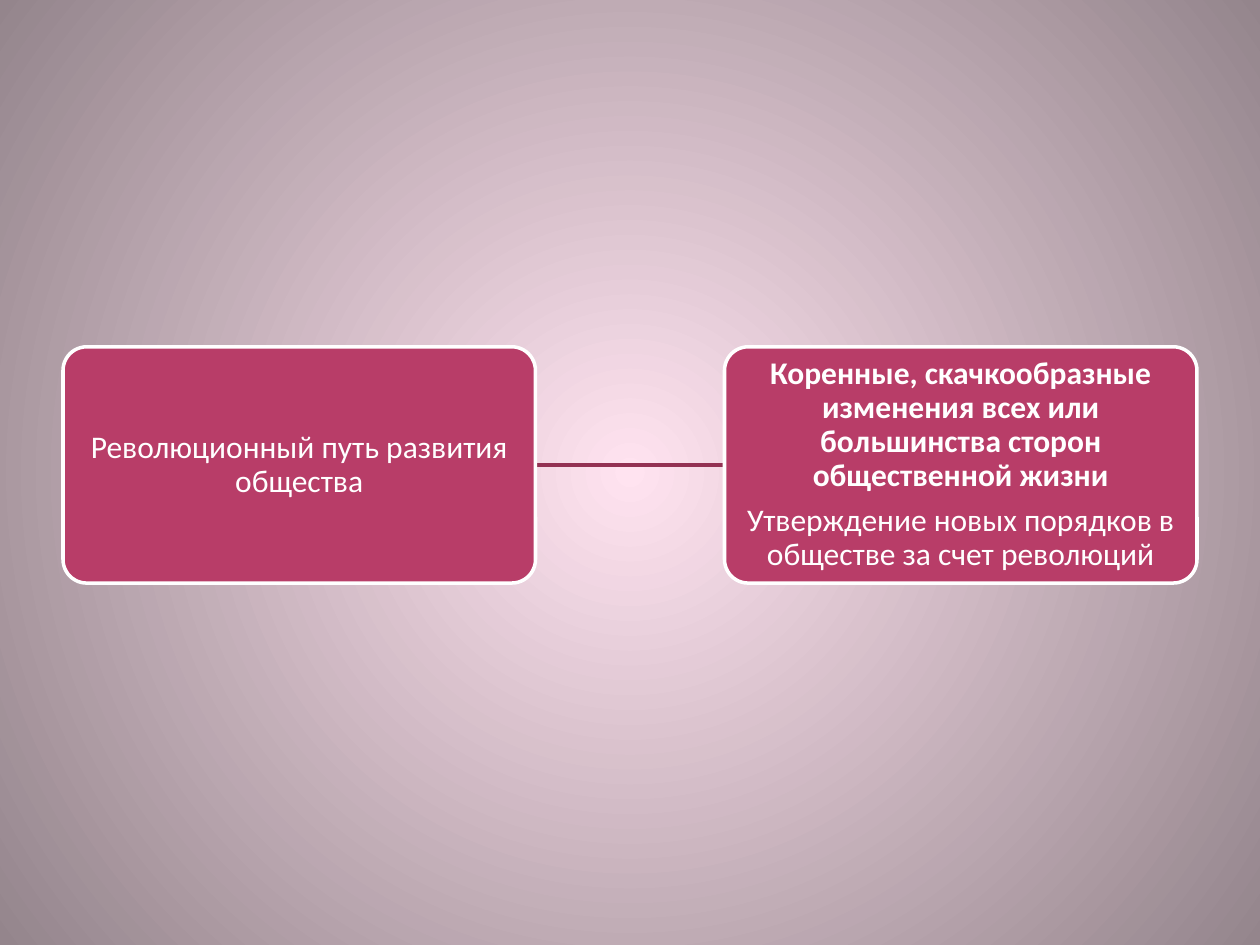
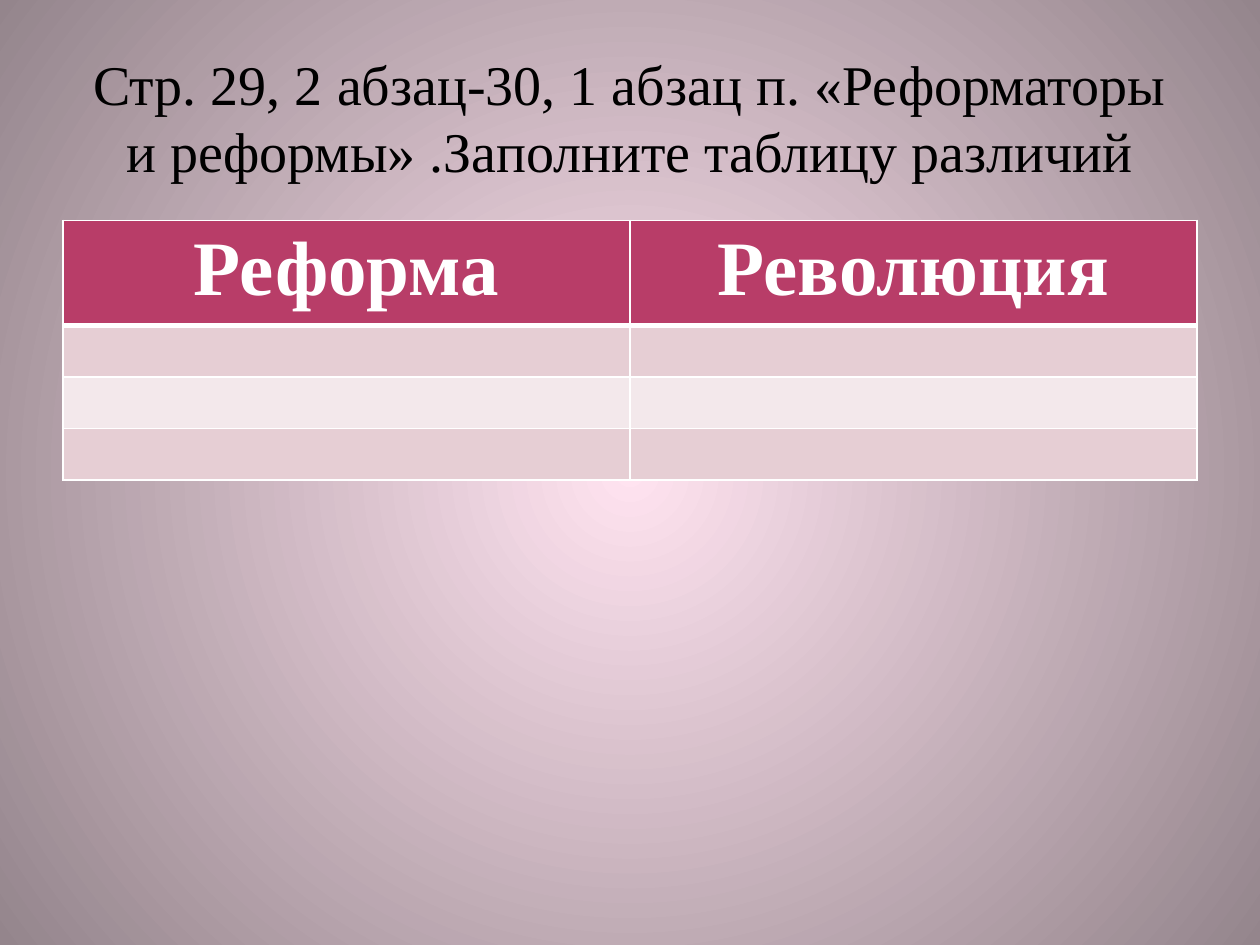
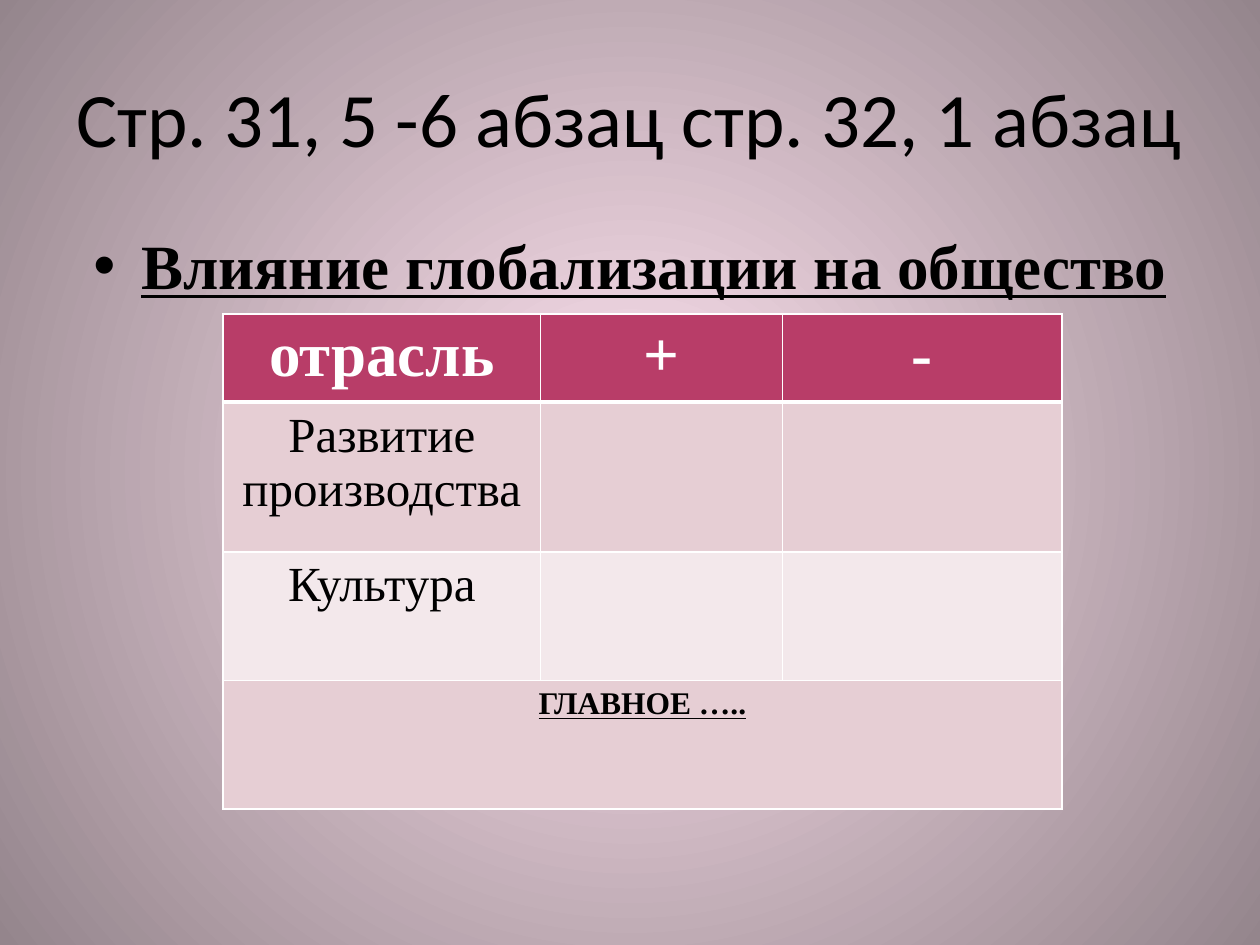
"""Builds three lesson slides on revolution, reform and globalization."""
from lxml.etree import SubElement
from pptx import Presentation
from pptx.dml.color import RGBColor
from pptx.enum.shapes import MSO_CONNECTOR, MSO_SHAPE
from pptx.enum.text import MSO_ANCHOR, PP_ALIGN
from pptx.oxml.ns import qn
from pptx.util import Inches, Pt

BERRY = RGBColor(0xB8, 0x3D, 0x68)
DARK_BERRY = RGBColor(0x93, 0x31, 0x53)
PALE_PINK = RGBColor(0xFF, 0xE3, 0xF0)
MAUVE = RGBColor(0x94, 0x85, 0x8C)
ROSE_BAND = RGBColor(0xE6, 0xCE, 0xD4)
LIGHT_BAND = RGBColor(0xF3, 0xE8, 0xEB)
WHITE = RGBColor(0xFF, 0xFF, 0xFF)
BLACK = RGBColor(0, 0, 0)
SANS, SERIF = "Calibri", "Times New Roman"


def write(paragraph, text, size=18, font=SERIF, color=BLACK, bold=False,
          underline=False, spacing=None, before=None, after=None):
    paragraph.alignment = PP_ALIGN.CENTER
    paragraph.line_spacing = spacing
    paragraph.space_before = before
    paragraph.space_after = after
    run = paragraph.add_run()
    run.text = text
    run.font.size = Pt(size)
    run.font.name = font
    run.font.color.rgb = color
    run.font.bold = bold
    run.font.underline = underline


def add_border(cell, side, weight):
    edge = SubElement(cell._tc.get_or_add_tcPr(), qn(f"a:{side}"), w=str(Pt(weight)))
    paint = SubElement(edge, qn("a:solidFill"))
    SubElement(paint, qn("a:srgbClr"), val=str(WHITE))


deck = Presentation()
deck.slide_width, deck.slide_height = Inches(10), Inches(7.5)
col, row = deck.slide_width / 100, deck.slide_height / 100

backdrop = deck.slide_master.background.fill
backdrop.gradient()
for stop, color, position in zip(backdrop.gradient_stops, (PALE_PINK, MAUVE), (0, 1)):
    stop.color.rgb = color
    stop.position = position
gradient = deck.slide_master.element.find(".//" + qn("a:gradFill"))
gradient.remove(gradient.find(qn("a:lin")))
circle = SubElement(gradient, qn("a:path"), path="circle")
SubElement(circle, qn("a:fillToRect"), l="50000", t="50000", r="50000", b="50000")

blank = deck.slide_layouts[6]
revolution, differences, globalization = [deck.slides.add_slide(blank) for _ in range(3)]

card_width, card_height, card_top = 37.5, 25, 36.7
card_lefts = (5, 57.5)
card_texts = (
    [("Революционный путь развития общества", False)],
    [("Коренные, скачкообразные изменения всех или большинства сторон "
      "общественной жизни", True),
     ("Утверждение новых порядков в обществе за счет революций", False)],
)
middle = int((card_top + card_height / 2) * row)
link = revolution.shapes.add_connector(
    MSO_CONNECTOR.STRAIGHT, int((card_lefts[0] + card_width) * col), middle,
    int(card_lefts[1] * col), middle)
link.line.color.rgb = DARK_BERRY
link.line.width = Pt(2)
SubElement(link._element.spPr, qn("a:effectLst"))

for left, statements in zip(card_lefts, card_texts):
    card = revolution.shapes.add_shape(
        MSO_SHAPE.ROUNDED_RECTANGLE, int(left * col), int(card_top * row),
        int(card_width * col), int(card_height * row))
    card.adjustments[0] = 0.1
    card.shadow.inherit = False
    card.fill.solid()
    card.fill.fore_color.rgb = BERRY
    card.line.color.rgb = WHITE
    card.line.width = Pt(2)
    frame = card.text_frame
    frame.word_wrap = True
    frame.vertical_anchor = MSO_ANCHOR.MIDDLE
    frame.margin_left = frame.margin_right = Inches(0.01)
    frame.margin_top = frame.margin_bottom = Inches(0.01)
    for index, (text, bold) in enumerate(statements):
        paragraph = frame.add_paragraph() if index else frame.paragraphs[0]
        write(paragraph, text, font=SANS, color=WHITE, bold=bold,
              spacing=0.9, after=Pt(6.3))

titles = (
    (differences, "Стр. 29, 2 абзац-30, 1 абзац п. «Реформаторы и реформы» "
     ".Заполните таблицу различий", 32, SERIF),
    (globalization, "Стр. 31, 5 -6 абзац стр. 32, 1 абзац", 44, SANS),
)
for slide, text, size, font in titles:
    title = slide.shapes.add_textbox(
        int(5 * col), int(4 * row), int(90 * col), int(16.67 * row)).text_frame
    title.word_wrap = True
    title.vertical_anchor = MSO_ANCHOR.MIDDLE
    write(title.paragraphs[0], text, size=size, font=font)

topic = globalization.shapes.add_textbox(
    int(5 * col), int(23.33 * row), int(90 * col), int(66 * row)).text_frame
topic.word_wrap = True
bullet_line = topic.paragraphs[0]
write(bullet_line, "Влияние глобализации на общество", size=36, bold=True,
      underline=True, before=Pt(7.2))
bullet_format = bullet_line._p.get_or_add_pPr()
bullet_format.set("marL", str(Inches(0.38)))
bullet_format.set("indent", str(-Inches(0.38)))
SubElement(bullet_format, qn("a:buFont"), typeface="Arial")
SubElement(bullet_format, qn("a:buChar"), char="•")

tables = (
    (differences, 5, 23.33, (45, 45), (5.45,) * 4, 44,
     [("Реформа", "Революция"), (), (), ()]),
    (globalization, 17.7, 33.2, (25.2, 19.2, 22.2), (5.45, 15.87, 13.6, 13.6), 36,
     [("отрасль", "+", "-"), ("Развитие производства",), ("Культура",), ()]),
)
for slide, left, top, widths, heights, header_size, texts in tables:
    grid = slide.shapes.add_table(
        len(heights), len(widths), int(left * col), int(top * row),
        int(sum(widths) * col), int(sum(heights) * row)).table
    for column, width in zip(grid.columns, widths):
        column.width = int(width * col)
    for r, height in enumerate(heights):
        grid.rows[r].height = int(height * row)
        for c in range(len(widths)):
            cell = grid.cell(r, c)
            for side in ("lnL", "lnR", "lnT", "lnB"):
                thick = (r, side) in ((0, "lnB"), (1, "lnT"))
                add_border(cell, side, 3 if thick else 1)
            cell.fill.solid()
            cell.fill.fore_color.rgb = (
                BERRY if r == 0 else ROSE_BAND if r % 2 else LIGHT_BAND)
        for c, text in enumerate(texts[r]):
            header = r == 0
            write(grid.cell(r, c).text_frame.paragraphs[0], text,
                  size=header_size if header else 28,
                  color=WHITE if header else BLACK, bold=header)

summary = grid.cell(3, 0)
summary.merge(grid.cell(3, 2))
write(summary.text_frame.paragraphs[0], "ГЛАВНОЕ …..", bold=True, underline=True)

deck.save("out.pptx")
